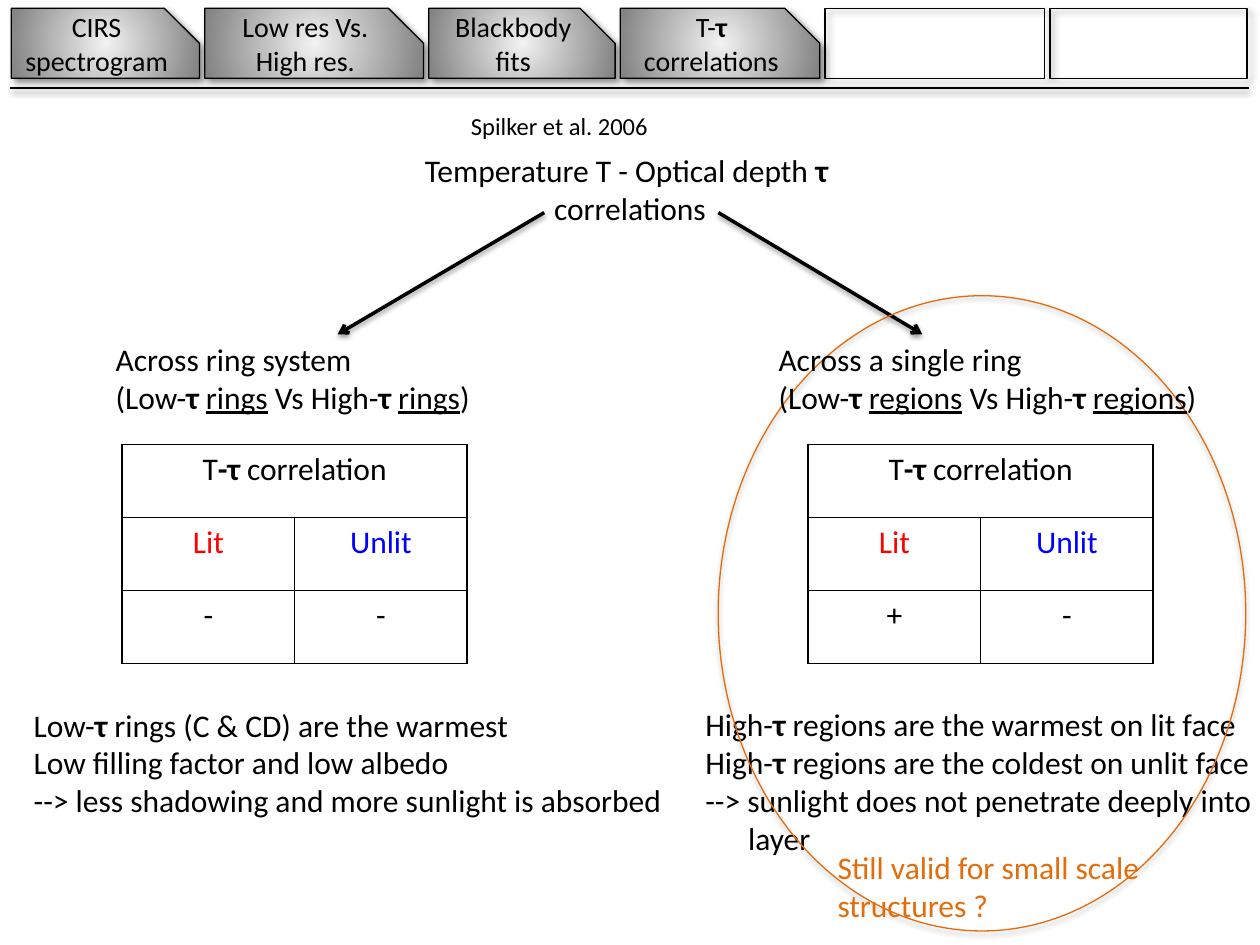
from lxml import etree
from pptx import Presentation
from pptx.dml.color import RGBColor
from pptx.enum.shapes import MSO_CONNECTOR, MSO_SHAPE
from pptx.enum.text import MSO_ANCHOR, MSO_AUTO_SIZE, PP_ALIGN
from pptx.oxml import parse_xml
from pptx.oxml.ns import nsdecls, qn
from pptx.util import Pt

STRAIGHT = MSO_CONNECTOR.STRAIGHT
SNIP = MSO_SHAPE.SNIP_ROUND_RECTANGLE
OVAL = MSO_SHAPE.OVAL
MIDDLE = MSO_ANCHOR.MIDDLE
GROW = MSO_AUTO_SIZE.SHAPE_TO_FIT_TEXT
LEFT, CENTER = PP_ALIGN.LEFT, PP_ALIGN.CENTER

BLACK = RGBColor(0, 0, 0)
RED = RGBColor(255, 0, 0)
BLUE = RGBColor(0, 0, 255)
ORANGE = RGBColor(0xE4, 0x6C, 0x0A)
PALE = RGBColor(0xF2, 0xF2, 0xF2)
GRAY = RGBColor(0x80, 0x80, 0x80)

# Opacity in percent, blur and distance in points, angle in degrees
TAB_SHADE = (43, 4, 3, 45)
LINE_SHADE = (38, 3.1, 1.6, 90)
OVAL_SHADE = (35, 3.1, 1.8, 90)
MARKS = {"*": "bold", "_": "underline"}


class Deck:
    def __init__(self, slide):
        self.slide = slide
        self.base = {"name": "Calibri", "size": Pt(18)}

    def fill(self, frame, lines, align=LEFT, color=BLACK, **look):
        """Fill a frame; '|' parts runs, a leading * is bold, _ is underlined."""
        for i, line in enumerate(lines):
            para = frame.paragraphs[0] if i == 0 else frame.add_paragraph()
            para.alignment = align
            for part in line.split("|"):
                form = {**self.base, **look}
                if part[:1] in MARKS:
                    form[MARKS[part[0]]] = True
                    part = part[1:]
                run = para.add_run()
                run.text = part
                for key, value in form.items():
                    setattr(run.font, key, value)
                run.font.color.rgb = color

    def shade(self, item, alpha, blur, dist, angle):
        item._element.spPr.append(parse_xml(
            f'<a:effectLst {nsdecls("a")}><a:outerShdw blurRad="{Pt(blur)}" '
            f'dist="{Pt(dist)}" dir="{angle * 60000}" rotWithShape="0">'
            f'<a:srgbClr val="{BLACK}"><a:alpha val="{alpha * 1000}"/>'
            '</a:srgbClr></a:outerShdw></a:effectLst>'))

    def line(self, x1, y1, x2, y2, width, arrow=False):
        link = self.slide.shapes.add_connector(
            STRAIGHT, Pt(x1), Pt(y1), Pt(x2), Pt(y2))
        link.line.color.rgb = BLACK
        link.line.width = Pt(width)
        if arrow:
            edge = link._element.spPr.find(qn("a:ln"))
            etree.SubElement(edge, qn("a:tailEnd"), type="arrow")
        self.shade(link, *LINE_SHADE)

    def shape(self, kind, x, y, w, h, color, shade):
        item = self.slide.shapes.add_shape(kind, Pt(x), Pt(y), Pt(w), Pt(h))
        item.fill.background()
        item.line.color.rgb = color
        item.line.width = Pt(0.75)
        self.shade(item, *shade)
        return item

    def tab(self, x, y, w, h, lines):
        item = self.shape(SNIP, x, y, w, h, BLACK, TAB_SHADE)
        item.adjustments[0] = 0
        item.adjustments[1] = 0.5 if lines else 0
        if lines:
            self.glow(item)
            item.text_frame.word_wrap = True
            item.text_frame.vertical_anchor = MIDDLE
            self.fill(item.text_frame, lines, CENTER, size=Pt(16))

    def glow(self, item):
        """Give a shape a round gradient, pale in the middle."""
        props = item._element.spPr
        stops = "".join(
            f'<a:gs pos="{pos}"><a:srgbClr val="{color}"/></a:gs>'
            for pos, color in ((0, PALE), (100000, GRAY)))
        props.replace(props.find(qn("a:noFill")), parse_xml(
            f'<a:gradFill {nsdecls("a")}><a:gsLst>{stops}</a:gsLst>'
            '<a:path path="circle"><a:fillToRect l="50000" t="50000" '
            'r="50000" b="50000"/></a:path></a:gradFill>'))

    def text(self, x, y, w, h, lines, align=LEFT, color=BLACK, **look):
        box = self.slide.shapes.add_textbox(Pt(x), Pt(y), Pt(w), Pt(h))
        frame = box.text_frame
        frame.word_wrap = True
        frame.auto_size = GROW
        self.fill(frame, lines, align, color, **look)
        return frame

    def table(self, x, y, w, h, signs):
        rows = (("T|*-τ |correlation", ""), ("Lit", "Unlit"), signs)
        grid = self.slide.shapes.add_table(
            3, 2, Pt(x), Pt(y), Pt(w), Pt(h)).table
        grid.first_row = grid.horz_banding = False
        grid.cell(0, 0).merge(grid.cell(0, 1))
        hues = {"Lit": RED, "Unlit": BLUE}
        for r, row in enumerate(rows):
            for c, word in enumerate(row):
                cell = grid.cell(r, c)
                cell.fill.background()
                self.frame(cell)
                if word:
                    self.fill(cell.text_frame, [word], CENTER,
                              hues.get(word, BLACK))

    def frame(self, cell):
        """Draw the four borders of a cell."""
        props = cell._tc.get_or_add_tcPr()
        for i, side in enumerate("LRTB"):
            props.insert(i, parse_xml(
                f'<a:ln{side} {nsdecls("a")} w="{Pt(1)}"><a:solidFill>'
                f'<a:srgbClr val="{BLACK}"/></a:solidFill></a:ln{side}>'))


def main():
    show = Presentation()
    show.slide_width, show.slide_height = Pt(720), Pt(540)
    deck = Deck(show.slides.add_slide(show.slide_layouts[6]))

    deck.line(6, 50.5, 713.5, 50.5, 1)
    tabs = (
        (107.5, ["CIRS", "spectrogram"]),
        (125, ["Low res Vs.", "High res."]),
        (106.5, ["Blackbody fits"]),
        (114, ["T-|*τ", "correlations"]),
        (125.5, []),
        (112.5, []),
    )
    left, gap = 6.5, 3
    for width, lines in tabs:
        deck.tab(left, 4.75, width, 40, lines)
        left += width + gap

    deck.line(311, 121.5, 193, 191, 2, arrow=True)
    deck.line(410.5, 121.5, 527, 191, 2, arrow=True)
    for x, signs in ((69.8, "--"), (461.8, "+-")):
        deck.table(x, 254, 197.2, 125.1, signs)

    notes = deck.text(396, 399.6, 335, 94.5, [
        "High-|*τ| regions are the warmest on lit face",
        "High-|*τ| regions are the coldest on unlit face",
        "--> sunlight does not penetrate deeply into",
        "layer"])
    notes.paragraphs[-1]._p.get_or_add_pPr().set("marL", str(Pt(24.5)))
    deck.text(262, 59.8, 118, 24.5, ["Spilker et al. 2006"], size=Pt(14))
    deck.text(12.2, 399.6, 376.5, 72.7, [
        "Low-|*τ| rings (C & CD) are the warmest",
        "Low filling factor and low albedo",
        "--> less shadowing and more sunlight is absorbed"])
    deck.shape(OVAL, 410.4, 169, 301.5, 363, ORANGE, OVAL_SHADE)
    deck.text(471.5, 481, 188.6, 51, [
        "Still valid for small scale", "structures ?"], color=ORANGE)
    deck.text(180, 82.8, 360, 51, [
        "Temperature T - Optical depth |*τ ", "correlations"], CENTER)
    deck.text(59, 190.8, 223, 51, [
        "Across ring system",
        "(Low-|*τ |_rings| Vs High-|*τ |_rings|)"])
    deck.text(437.8, 190.8, 266.5, 51, [
        "Across a single ring",
        "(Low-|*τ |_regions| Vs High-|*τ |_regions|)"])
    show.save("out.pptx")


if __name__ == "__main__":
    main()
